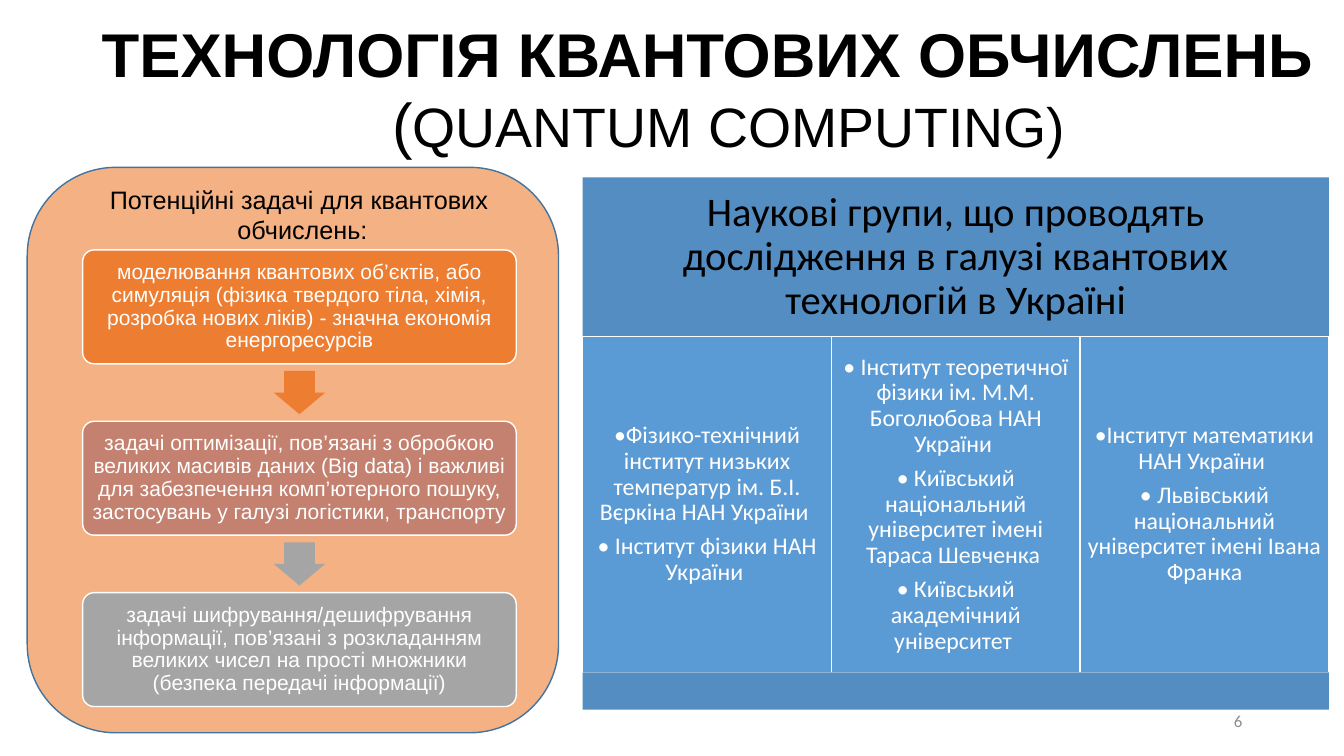
from pptx import Presentation
from pptx.dml.color import RGBColor
from pptx.enum.shapes import MSO_SHAPE
from pptx.enum.text import MSO_ANCHOR, PP_ALIGN
from pptx.util import Inches, Pt

RECTANGLE = MSO_SHAPE.RECTANGLE
ROUNDED = MSO_SHAPE.ROUNDED_RECTANGLE
DOWN_ARROW = MSO_SHAPE.DOWN_ARROW
TOP, MIDDLE = MSO_ANCHOR.TOP, MSO_ANCHOR.MIDDLE
CENTER, RIGHT = PP_ALIGN.CENTER, PP_ALIGN.RIGHT

COLORS = {
    "black": "000000", "white": "FFFFFF", "page": "8C8C8C",
    "panel": "F4B183", "outline": "43739E",
    "orange": "ED7D31", "rose": "C48170", "gray": "A5A5A5",
    "band": "538DC1", "column": "5B9BD5",
}

TASKS = [
    ("моделювання квантових об’єктів, або симуляція (фізика твердого тіла, хімія, "
     "розробка нових ліків) - значна економія енергоресурсів", "orange"),
    ("задачі оптимізації, пов’язані з обробкою великих масивів даних (Big data) "
     "і важливі для забезпечення комп’ютерного пошуку, застосувань у галузі "
     "логістики, транспорту", "rose"),
    ("задачі шифрування/дешифрування інформації, пов’язані з розкладанням великих "
     "чисел на прості множники (безпека передачі інформації)", "gray"),
]
ARROW_COLORS = ["orange", "gray"]

GROUPS_HEADING = ("Наукові групи, що проводять дослідження в галузі "
                  "квантових технологій в Україні")
GROUPS = [
    ["•Фізико-технічний інститут низьких температур ім. Б.І. Вєркіна НАН України ",
     "• Інститут фізики НАН України "],
    ["• Інститут теоретичної фізики ім. М.М. Боголюбова НАН України ",
     "• Київський національний університет імені Тараса Шевченка ",
     "• Київський академічний університет "],
    ["•Інститут математики НАН України ",
     "• Львівський національний університет імені Івана Франка"],
]


def format_run(run, size, font="Arial", color="black", bold=False):
    """Set the font of one run."""
    run.font.size = Pt(size)
    run.font.name = font
    run.font.bold = bold
    run.font.color.rgb = RGBColor.from_string(COLORS[color])


def write_text(shape, paragraphs, size, font="Arial", color="black", align=CENTER,
               anchor=MIDDLE, spacing=1.0, after=0, inset=(0.1, 0.05)):
    """Write paragraphs into a shape with one format."""
    frame = shape.text_frame
    frame.word_wrap = True
    frame.vertical_anchor = anchor
    frame.margin_left = frame.margin_right = Inches(inset[0])
    frame.margin_top = frame.margin_bottom = Inches(inset[1])
    for index, text in enumerate(paragraphs):
        paragraph = frame.add_paragraph() if index else frame.paragraphs[0]
        paragraph.alignment = align
        paragraph.line_spacing = spacing
        paragraph.space_after = Pt(after)
        run = paragraph.add_run()
        run.text = text
        format_run(run, size, font, color)


def add_box(slide, kind, box, fill, line=None):
    """Add a filled preset shape, outlined when a line colour is given."""
    shape = slide.shapes.add_shape(kind, *map(Inches, box))
    shape.shadow.inherit = False
    shape.fill.solid()
    shape.fill.fore_color.rgb = RGBColor.from_string(COLORS[fill])
    if line:
        shape.line.color.rgb = RGBColor.from_string(COLORS[line])
        shape.line.width = Pt(1)
    else:
        shape.line.fill.background()
    return shape


def add_label(slide, box, paragraphs, **text_format):
    """Add a text box."""
    label = slide.shapes.add_textbox(*map(Inches, box))
    write_text(label, paragraphs, **text_format)


def add_title(slide, box):
    """Add the two-line title with a hanging indent."""
    title = slide.shapes.add_textbox(*map(Inches, box))
    title.text_frame.word_wrap = True
    paragraph = title.text_frame.paragraphs[0]
    paragraph.alignment = CENTER
    paragraph.line_spacing = 0.95
    properties = paragraph._p.get_or_add_pPr()
    properties.set("marL", str(Inches(0.25)))
    properties.set("indent", str(Inches(-0.25)))
    parts = [("ТЕХНОЛОГІЯ КВАНТОВИХ ОБЧИСЛЕНЬ", 44.1, True),
             (" (", 44.1, False), ("QUANTUM COMPUTING)", 39.6, False)]
    for index, (text, size, bold) in enumerate(parts):
        if index == 1:
            paragraph.add_line_break()
        run = paragraph.add_run()
        run.text = text
        format_run(run, size, bold=bold)


def add_tasks(slide, box):
    """Add the rounded panel with three tasks joined by arrows."""
    left, top, width, _ = box
    add_box(slide, ROUNDED, box, "panel", "outline")
    add_label(slide, (left, top + 0.12, width + 0.12, 0.7),
              ["Потенційні задачі для квантових", " обчислень:"], size=18, anchor=TOP)
    task_left, task_width, task_height, pitch = left + 0.55, 4.3, 1.13, 1.7
    arrow_width, arrow_height = 0.51, 0.43
    for index, (text, color) in enumerate(TASKS):
        task_top = top + 0.82 + index * pitch
        task = add_box(slide, ROUNDED, (task_left, task_top, task_width, task_height),
                       color, "white")
        task.adjustments[0] = 0.1
        write_text(task, [text], size=15, color="white", spacing=0.9,
                   inset=(0.06, 0.06))
        if index < len(ARROW_COLORS):
            arrow_left = task_left + (task_width - arrow_width) / 2
            arrow_top = task_top + (task_height + pitch - arrow_height) / 2
            arrow = add_box(slide, DOWN_ARROW,
                            (arrow_left, arrow_top, arrow_width, arrow_height),
                            ARROW_COLORS[index])
            arrow.adjustments[0] = 0.6
            arrow.adjustments[1] = 0.5


def add_groups(slide, box):
    """Add the heading band, the columns of institutes and the bottom band."""
    left, top, width, height = box
    heading_height, bottom_height = 1.58, 0.37
    heading = add_box(slide, RECTANGLE, (left, top, width, heading_height), "band")
    write_text(heading, [GROUPS_HEADING], size=29, font="Calibri", spacing=0.9,
               inset=(0.12, 0.12))
    column_width = width / len(GROUPS)
    column_height = height - heading_height - bottom_height
    for index, institutes in enumerate(GROUPS):
        column = add_box(slide, RECTANGLE,
                         (left + index * column_width, top + heading_height,
                          column_width, column_height), "column", "white")
        write_text(column, institutes, size=17, font="Calibri", color="white",
                   spacing=0.9, after=6, inset=(0.07, 0.07))
    add_box(slide, RECTANGLE,
            (left, top + height - bottom_height, width, bottom_height), "band")


def main():
    """Build and save the slide."""
    presentation = Presentation()
    presentation.slide_width = Inches(13.33)
    presentation.slide_height = Inches(7.5)
    slide = presentation.slides.add_slide(presentation.slide_layouts[6])
    add_title(slide, (0.86, 0.16, 12.32, 1.45))
    add_tasks(slide, (0.27, 1.66, 5.27, 5.61))
    add_groups(slide, (5.78, 1.76, 7.4, 5.28))
    add_label(slide, (9.42, 6.95, 3, 0.4), ["6"], size=12, font="Calibri",
              color="page", align=RIGHT)
    presentation.save("out.pptx")


if __name__ == "__main__":
    main()
